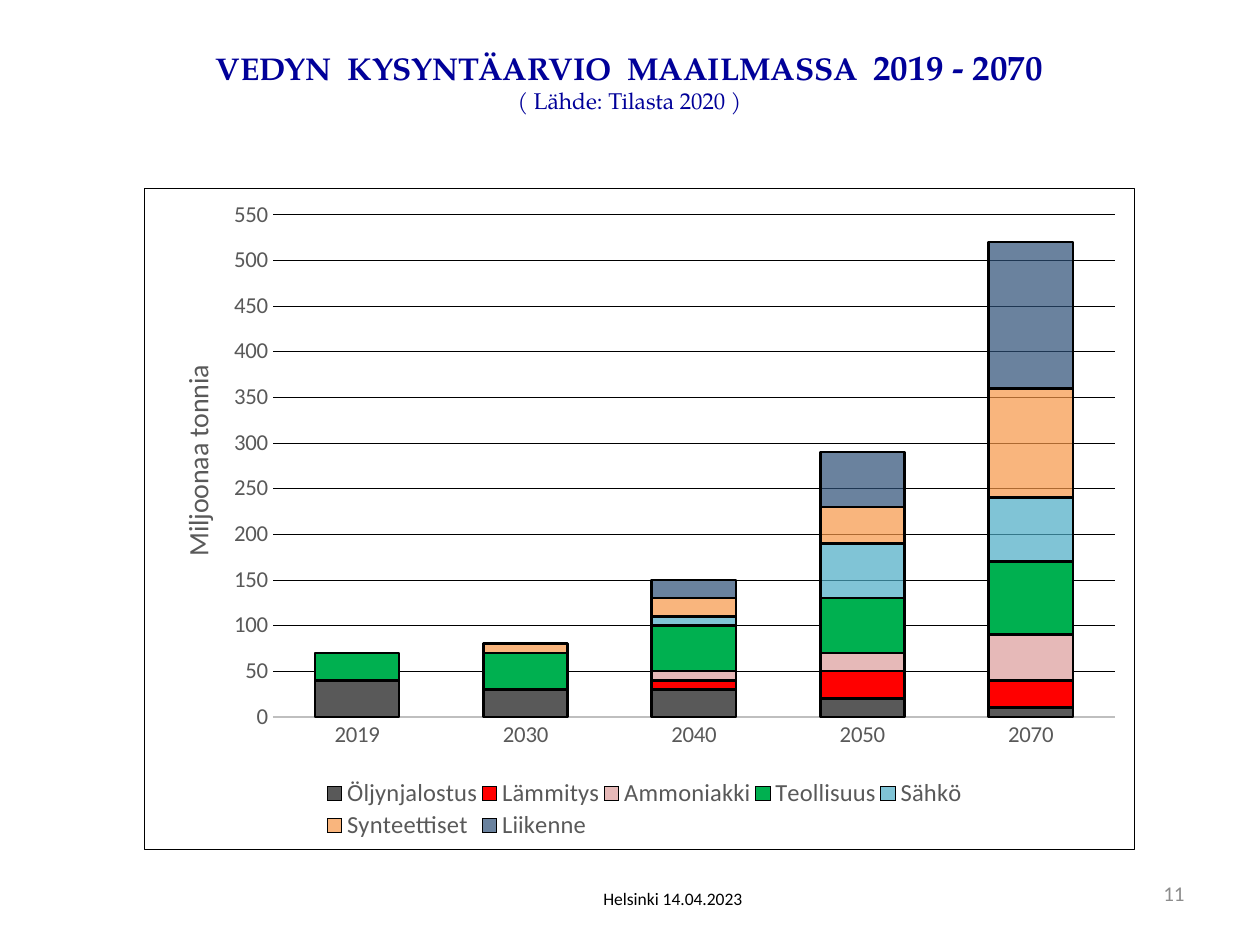
from lxml.etree import SubElement
from pptx import Presentation
from pptx.chart.data import CategoryChartData
from pptx.dml.color import RGBColor
from pptx.enum.chart import XL_CHART_TYPE, XL_LEGEND_POSITION, XL_TICK_MARK
from pptx.enum.text import MSO_ANCHOR, MSO_AUTO_SIZE, PP_ALIGN
from pptx.oxml import parse_xml
from pptx.oxml.ns import nsdecls, qn
from pptx.util import Inches, Pt

WIDTH, HEIGHT = Inches(10), Inches(7.5)
TITLE_FONT, BODY_FONT = "TeX Gyre Pagella", "Calibri"
NAVY, GRAY, BLACK = "000099", "595959", "000000"
YEARS = ["2019", "2030", "2040", "2050", "2070"]
DEMAND = [
    ("Öljynjalostus", (40, 30, 30, 20, 10), GRAY, 100),
    ("Lämmitys", (0, 0, 10, 30, 30), "FF0000", 100),
    ("Ammoniakki", (0, 0, 10, 20, 50), "E6B9B8", 100),
    ("Teollisuus", (30, 40, 50, 60, 80), "00B050", 100),
    ("Sähkö", (0, 0, 10, 60, 70), "4BACC6", 70),
    ("Synteettiset", (0, 10, 20, 40, 120), "F79646", 70),
    ("Liikenne", (0, 0, 20, 60, 160), "2C4D75", 70),
]


def color(value):
    return RGBColor.from_string(value)


def share(left, top, width, height):
    return int(left * WIDTH), int(top * HEIGHT), int(width * WIDTH), int(height * HEIGHT)


def style_font(font, name, size, value, bold=False):
    font.name, font.size, font.bold = name, Pt(size), bold
    font.color.rgb = color(value)


def style_line(line, width, value):
    line.color.rgb = color(value)
    line.width = Pt(width)


def add_title(slide, area):
    title = slide.shapes.title
    title.left, title.top, title.width, title.height = area
    frame = title.text_frame
    frame.auto_size = MSO_AUTO_SIZE.NONE
    frame.vertical_anchor = MSO_ANCHOR.TOP
    lines = [
        [("VEDYN  KYSYNTÄARVIO  MAAILMASSA  ", 18, True), ("2019 - 2070", 20, True)],
        [("( Lähde: Tilasta 2020 )", 13, False)],
    ]
    for index, spans in enumerate(lines):
        para = frame.add_paragraph() if index else frame.paragraphs[0]
        para.alignment = PP_ALIGN.CENTER
        para.space_before = Pt(0)
        for text, size, bold in spans:
            span = para.add_run()
            span.text = text
            style_font(span.font, TITLE_FONT, size, NAVY, bold)


def add_label(slide, area, text, size, value, alignment, anchor):
    frame = slide.shapes.add_textbox(*area).text_frame
    frame.word_wrap = True
    frame.vertical_anchor = anchor
    frame.text = text
    para = frame.paragraphs[0]
    para.alignment = alignment
    style_font(para.runs[0].font, BODY_FONT, size, value)


def place_part(element, index, inner=False, **shares):
    for old in element.findall(qn("c:layout")):
        element.remove(old)
    layout = parse_xml(f"<c:layout {nsdecls('c')}><c:manualLayout/></c:layout>")
    settings = {"layoutTarget": "inner"} if inner else {}
    settings.update(xMode="edge", yMode="edge", **shares)
    for tag, value in settings.items():
        SubElement(layout[0], qn(f"c:{tag}")).set("val", str(value))
    element.insert(index, layout)


def add_border(chart, width, value):
    border = parse_xml(
        f"<c:spPr {nsdecls('c', 'a')}><a:noFill/><a:ln w='{Pt(width)}'><a:solidFill>"
        f"<a:srgbClr val='{value}'/></a:solidFill></a:ln></c:spPr>"
    )
    chart._chartSpace.find(qn("c:txPr")).addprevious(border)


def style_axes(chart):
    years, tonnes = chart.category_axis, chart.value_axis
    for axis in (years, tonnes):
        axis.major_tick_mark = axis.minor_tick_mark = XL_TICK_MARK.NONE
        style_font(axis.tick_labels.font, BODY_FONT, 13, GRAY)
    style_line(years.format.line, 0.75, "BFBFBF")
    tonnes.format.line.fill.background()
    tonnes.minimum_scale, tonnes.maximum_scale, tonnes.major_unit = 0, 550, 50
    tonnes.has_major_gridlines = True
    style_line(tonnes.major_gridlines.format.line, 0.5, BLACK)
    frame = tonnes.axis_title.text_frame
    frame.text = "Miljoonaa tonnia"
    style_font(frame.paragraphs[0].runs[0].font, BODY_FONT, 16, GRAY)
    body = frame._txBody.find(qn("a:bodyPr"))
    body.set("rot", "-5400000")
    body.set("vert", "horz")
    place_part(tonnes.axis_title._element, 1, x=0.03, y=0.26)


def style_series(plot):
    plot.gap_width, plot.overlap, plot.vary_by_categories = 100, 100, False
    for series, (_, _, value, opacity) in zip(plot.series, DEMAND):
        fill = series.format.fill
        fill.solid()
        fill.fore_color.rgb = color(value)
        style_line(series.format.line, 1.5, BLACK)
        if opacity < 100:
            tint = series._element.xpath("c:spPr/a:solidFill/a:srgbClr")[0]
            SubElement(tint, qn("a:alpha")).set("val", str(opacity * 1000))


def add_demand_chart(slide, area):
    data = CategoryChartData()
    data.categories = YEARS
    for name, values, _, _ in DEMAND:
        data.add_series(name, values)
    chart = slide.shapes.add_chart(XL_CHART_TYPE.COLUMN_STACKED, *area, data).chart
    chart.has_title = False
    style_font(chart.font, BODY_FONT, 10, BLACK)
    add_border(chart, 0.5, BLACK)
    style_axes(chart)
    style_series(chart.plots[0])
    chart.has_legend = True
    legend = chart.legend
    legend.position = XL_LEGEND_POSITION.BOTTOM
    legend.include_in_layout = False
    style_font(legend.font, BODY_FONT, 14, GRAY)
    place_part(legend._element, 1, x=0.18, y=0.89, w=0.65, h=0.1)
    plot_area = chart._chartSpace.chart.plotArea
    place_part(plot_area, 0, inner=True, x=0.13, y=0.04, w=0.85, h=0.76)


def main():
    deck = Presentation()
    deck.slide_width, deck.slide_height = WIDTH, HEIGHT
    page = deck.slides.add_slide(deck.slide_layouts[5])
    add_title(page, share(0.106, 0.041, 0.787, 0.088))
    add_demand_chart(page, share(0.114, 0.199, 0.787, 0.7))
    add_label(page, share(0.437, 0.933, 0.194, 0.037), "Helsinki 14.04.2023",
              10, BLACK, PP_ALIGN.CENTER, MSO_ANCHOR.TOP)
    add_label(page, share(0.717, 0.911, 0.233, 0.069), "11",
              12, "8C8C8C", PP_ALIGN.RIGHT, MSO_ANCHOR.MIDDLE)
    deck.save("out.pptx")


if __name__ == "__main__":
    main()
